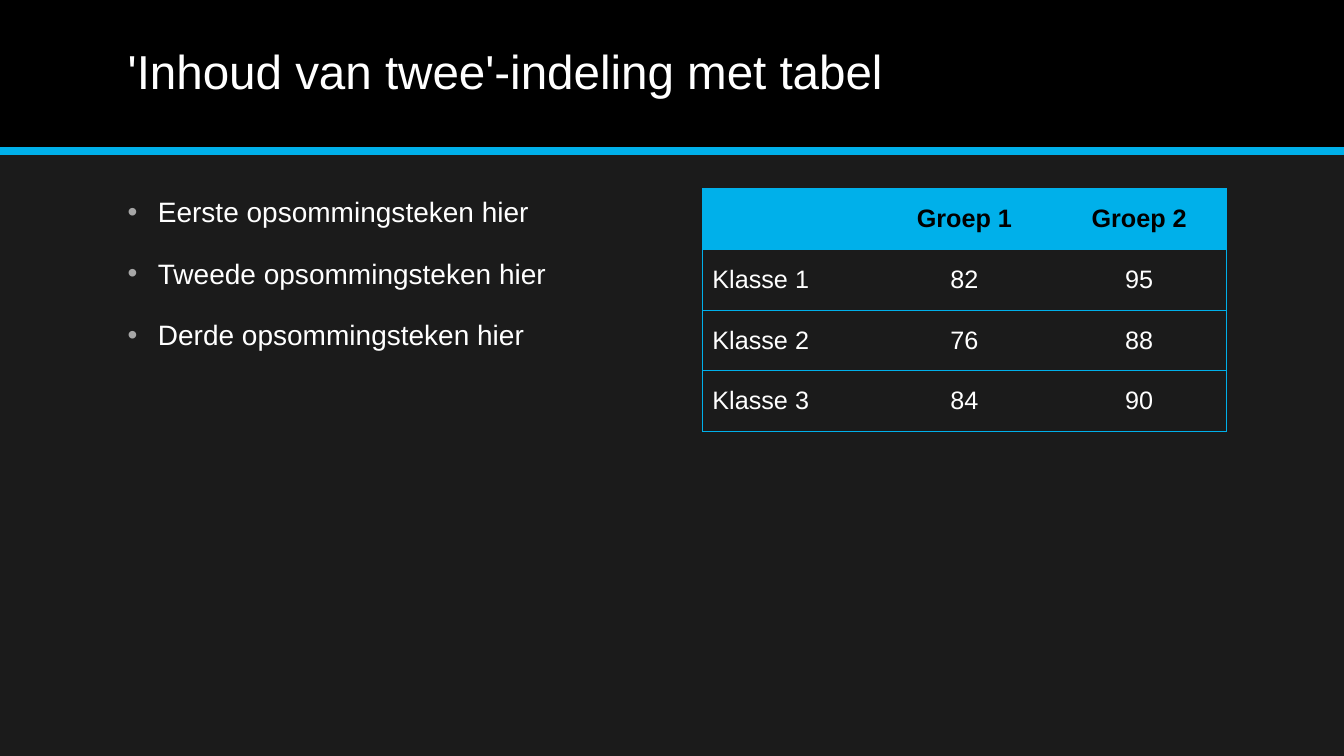
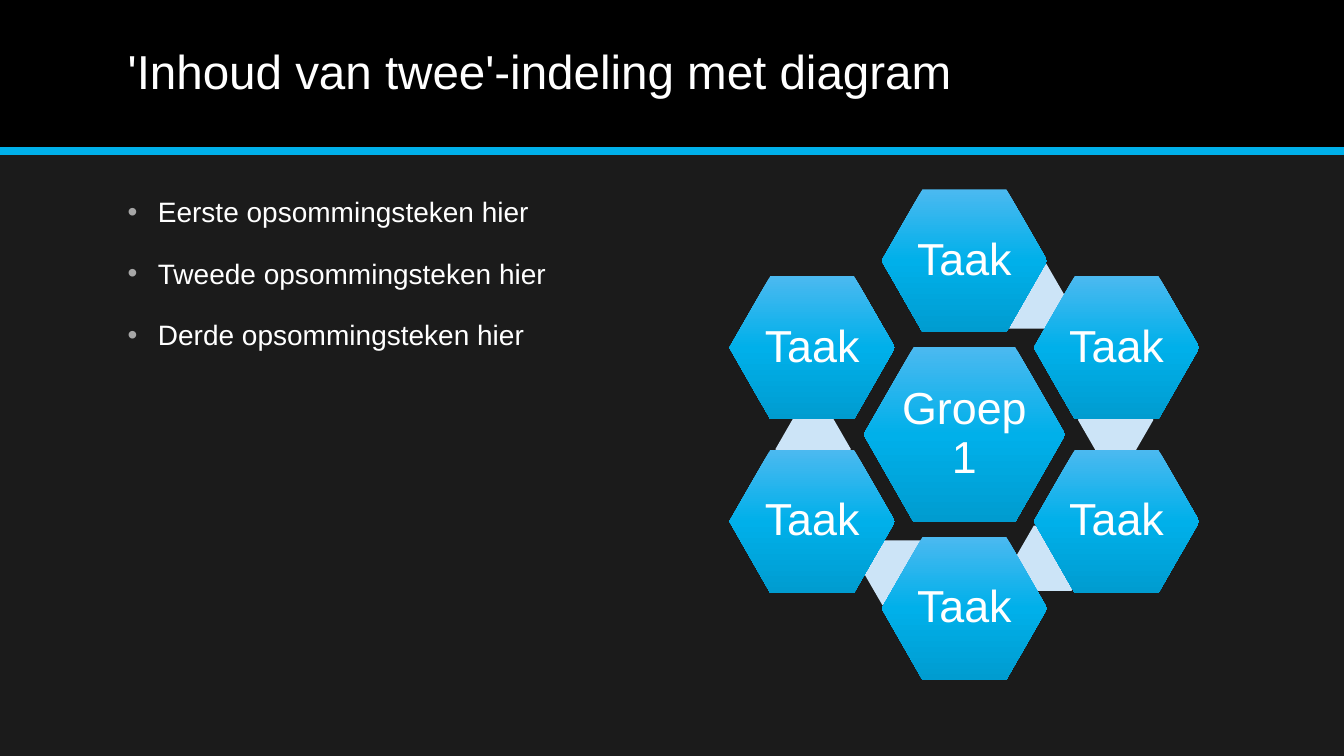
from copy import deepcopy
from dataclasses import dataclass
from math import cos, radians, sin

from lxml import etree
from pptx import Presentation
from pptx.dml.color import RGBColor
from pptx.enum.shapes import MSO_CONNECTOR, MSO_SHAPE
from pptx.enum.text import MSO_ANCHOR, PP_ALIGN
from pptx.oxml.ns import qn
from pptx.util import Cm, Pt

HEXAGON, RECTANGLE = MSO_SHAPE.HEXAGON, MSO_SHAPE.RECTANGLE
STRAIGHT = MSO_CONNECTOR.STRAIGHT
MIDDLE = MSO_ANCHOR.MIDDLE
LEFT, CENTER = PP_ALIGN.LEFT, PP_ALIGN.CENTER

COLORS = {
    "background": "1B1B1B",
    "band": "000000",
    "accent": "00B0EA",
    "accent_light": "4BB9F0",
    "accent_dark": "009CD0",
    "link": "CCE4F7",
    "bullet": "A6A6A6",
    "text": "FFFFFF",
    "header_text": "000000",
}
FONT = "Arial"
NO_TABLE_STYLE = "{2D5ABB26-0587-4C30-8999-92F81FD0307C}"


@dataclass
class Box:
    left: float
    top: float
    width: float
    height: float

    def lengths(self):
        return [Cm(v) for v in (self.left, self.top, self.width, self.height)]


SLIDE = Box(0, 0, 33.87, 19.05)
BAND = Box(0, 0, SLIDE.width, 3.81)
TITLE = Box(2.97, 0.34, 27.94, 3.05)
LEFT_CONTENT = Box(2.97, 4.78, 13.21, 12.4)
RIGHT_CONTENT = Box(17.7, 4.75, 13.21, 12.4)

BULLETS = [f"{ordinal} opsommingsteken hier" for ordinal in ("Eerste", "Tweede", "Derde")]
SCORES = [
    ["", "Groep 1", "Groep 2"],
    ["Klasse 1", "82", "95"],
    ["Klasse 2", "76", "88"],
    ["Klasse 3", "84", "90"],
]


def rgb(name):
    return RGBColor.from_string(COLORS[name])


def style_font(paragraph, size, color="text", bold=False):
    font = paragraph.font
    font.name, font.size, font.bold = FONT, Pt(size), bold
    font.color.rgb = rgb(color)


def add_color(parent, name):
    etree.SubElement(parent, qn("a:srgbClr"), val=COLORS[name])


def add_text_frame(slide, box):
    frame = slide.shapes.add_textbox(*box.lengths()).text_frame
    frame.word_wrap = True
    return frame


def add_plain_shape(slide, preset, box):
    shape = slide.shapes.add_shape(preset, *box.lengths())
    shape.shadow.inherit = False
    shape.line.fill.background()
    return shape


def add_header(slide, title):
    band = add_plain_shape(slide, RECTANGLE, BAND)
    band.fill.solid()
    band.fill.fore_color.rgb = rgb("band")

    rule = slide.shapes.add_connector(
        STRAIGHT, 0, Cm(BAND.height), Cm(BAND.width), Cm(BAND.height))
    rule.line.width = Pt(6)
    rule.line.color.rgb = rgb("accent")
    etree.SubElement(rule.element.spPr, qn("a:effectLst"))

    frame = add_text_frame(slide, TITLE)
    frame.vertical_anchor = MIDDLE
    paragraph = frame.paragraphs[0]
    paragraph.text = title
    paragraph.line_spacing = 0.9
    style_font(paragraph, 34)


def add_bullets(slide, box, items):
    frame = add_text_frame(slide, box)
    for index, item in enumerate(items):
        paragraph = frame.add_paragraph() if index else frame.paragraphs[0]
        paragraph.text = item
        paragraph.space_before = Pt(20)
        properties = paragraph._p.get_or_add_pPr()
        properties.set("marL", str(Cm(0.76)))
        properties.set("indent", str(-Cm(0.76)))
        add_color(etree.SubElement(properties, qn("a:buClr")), "bullet")
        etree.SubElement(properties, qn("a:buFont"), typeface=FONT)
        etree.SubElement(properties, qn("a:buChar"), char="•")
        style_font(paragraph, 20)


def add_cell_borders(cell, sides):
    properties = cell._tc.get_or_add_tcPr()
    for side in sides:
        border = etree.SubElement(properties, qn(f"a:ln{side}"), w=str(Pt(0.5)))
        add_color(etree.SubElement(border, qn("a:solidFill")), "accent")


def add_score_table(slide, box, rows):
    row_height = 1.53
    columns = len(rows[0])
    area = Box(box.left, box.top, box.width, row_height * len(rows))
    table = slide.shapes.add_table(len(rows), columns, *area.lengths()).table
    table.horz_banding = False
    table._tbl.tblPr.find(qn("a:tableStyleId")).text = NO_TABLE_STYLE
    for r, row in enumerate(rows):
        for c, value in enumerate(row):
            cell = table.cell(r, c)
            cell.vertical_anchor = MIDDLE
            outer = ["L"] * (c == 0) + ["R"] * (c == columns - 1)
            add_cell_borders(cell, outer + ["T", "B"])
            if r == 0:
                cell.fill.solid()
                cell.fill.fore_color.rgb = rgb("accent")
            else:
                cell.fill.background()
            paragraph = cell.text_frame.paragraphs[0]
            paragraph.text = value
            paragraph.alignment = CENTER if c else LEFT
            style_font(paragraph, 18, "text" if r else "header_text", r == 0)


def add_hexagon(slide, center, width, height, corner):
    x, y = center
    box = Box(x - width / 2, y - height / 2, width, height)
    hexagon = add_plain_shape(slide, HEXAGON, box)
    hexagon.adjustments[0] = corner
    return hexagon


def add_labelled_hexagon(slide, center, width, height, label):
    hexagon = add_hexagon(slide, center, width, height, 0.286)
    fill = hexagon.fill
    fill.gradient()
    fill.gradient_angle = 270
    stop_list = hexagon.element.spPr.find(".//" + qn("a:gsLst"))
    stop_list.append(deepcopy(stop_list[0]))
    shades = ("accent_light", "accent", "accent_dark")
    for index, (stop, shade) in enumerate(zip(fill.gradient_stops, shades)):
        stop.position = index / 2
        stop.color.rgb = rgb(shade)

    frame = hexagon.text_frame
    frame.word_wrap = True
    frame.vertical_anchor = MIDDLE
    frame.margin_left = frame.margin_right = Cm(0.1)
    frame.margin_top = frame.margin_bottom = Cm(0.1)
    paragraph = frame.paragraphs[0]
    paragraph.text = label
    paragraph.alignment = CENTER
    paragraph.line_spacing = 0.9
    style_font(paragraph, 32)


def add_hexagon_ring(slide, box, group, tasks):
    center_x = box.left + box.width / 2
    center_y = box.top + box.height / 2
    step = 360 / len(tasks)

    def ring_point(degrees, radius_x, radius_y):
        angle = radians(degrees)
        return center_x + radius_x * sin(angle), center_y - radius_y * cos(angle)

    for index in range(len(tasks) - 1):
        point = ring_point(24.5 + index * step, 3.83, 3.83)
        link = add_hexagon(slide, point, 1.9, 1.64, 0.289)
        link.fill.solid()
        link.fill.fore_color.rgb = rgb("link")

    add_labelled_hexagon(slide, (center_x, center_y), 5.08, 4.4, group)
    for index, task in enumerate(tasks):
        point = ring_point(index * step, 4.43, 4.38)
        add_labelled_hexagon(slide, point, 4.17, 3.6, task)


def add_two_content_slide(prs, title):
    slide = prs.slides.add_slide(prs.slide_layouts[6])
    background = slide.background.fill
    background.solid()
    background.fore_color.rgb = rgb("background")
    add_header(slide, title)
    add_bullets(slide, LEFT_CONTENT, BULLETS)
    return slide


def main():
    prs = Presentation()
    prs.slide_width, prs.slide_height = Cm(SLIDE.width), Cm(SLIDE.height)

    table_slide = add_two_content_slide(prs, "'Inhoud van twee'-indeling met tabel")
    add_score_table(table_slide, RIGHT_CONTENT, SCORES)

    ring_slide = add_two_content_slide(prs, "'Inhoud van twee'-indeling met diagram")
    add_hexagon_ring(ring_slide, RIGHT_CONTENT, "Groep 1", ["Taak"] * 6)

    prs.save("out.pptx")


if __name__ == "__main__":
    main()
